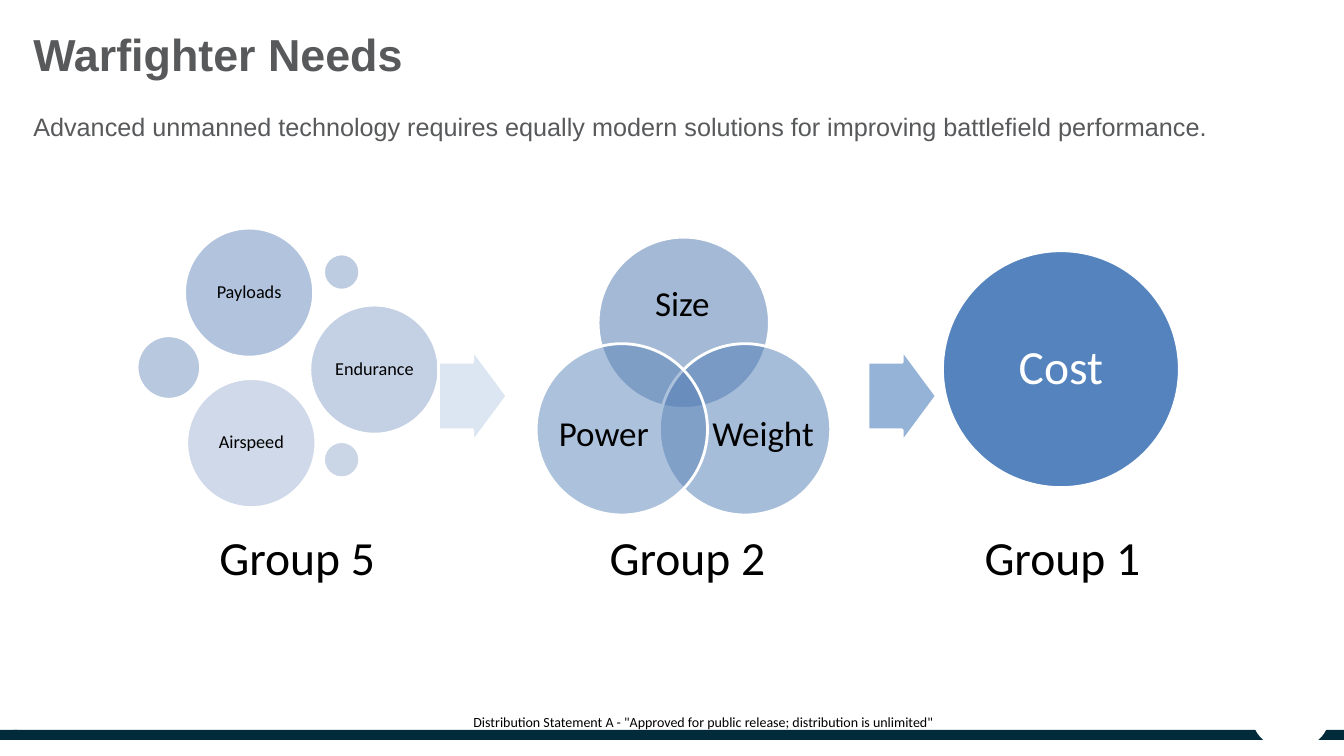
from lxml import etree
from pptx import Presentation
from pptx import util as u
from pptx.dml.color import RGBColor
from pptx.enum import shapes, text
from pptx.oxml import ns

COLORS = {
    "navy": "012A3A", "white": "FFFFFF", "black": "000000", "gray": "58595B",
    "size": "4875AC", "weight": "4F7CB4", "power": "5B84B9",
    "payloads": "678BBD", "left dot": "7393C1", "top dot": "7F9BC6",
    "endurance": "8BA4CA", "low dot": "96ACCF", "airspeed": "A2B4D4",
    "cost": "5483BE", "pale arrow": "DCE6F2", "mid arrow": "95B3D7",
}
SHAPE = shapes.MSO_SHAPE


class SlideBuilder:
    """Holds the style and the current slide."""
    body_font = "Calibri"
    head_font = "Arial"
    outline = 2

    def __init__(self, s):
        self.s = s

    def rgb(self, name):
        return RGBColor.from_string(COLORS[name])

    def add_words(self, tf, words, size, color, font=None, bold=False, inset=(0, 0),
                  align=text.PP_ALIGN.CENTER, anchor=text.MSO_ANCHOR.MIDDLE,
                  spacing=0.9, wrap=True):
        tf.word_wrap = wrap
        tf.auto_size = text.MSO_AUTO_SIZE.NONE
        tf.vertical_anchor = anchor
        tf.margin_left = tf.margin_right = u.Pt(inset[0])
        tf.margin_top = tf.margin_bottom = u.Pt(inset[1])
        p = tf.paragraphs[0]
        p.alignment, p.line_spacing = align, spacing
        p.space_before = u.Pt(0)
        r = p.add_run()
        r.text = words
        r.font.name, r.font.size, r.font.bold = font or self.body_font, u.Pt(size), bold
        r.font.color.rgb = self.rgb(color)

    def heading(self, sp, words, box, size, bold=False):
        sp.left, sp.top, sp.width, sp.height = map(u.Pt, box)
        pPr = sp.text_frame.paragraphs[0]._p.get_or_add_pPr()
        pPr.set("marL", "0")
        pPr.set("indent", "0")
        etree.SubElement(pPr, ns.qn("a:buNone"))
        self.add_words(sp.text_frame, words, size, "gray", self.head_font, bold,
                       align=text.PP_ALIGN.LEFT, anchor=text.MSO_ANCHOR.TOP, spacing=1.0)

    def label(self, words, box, size, **style):
        sp = self.s.shapes.add_textbox(*map(u.Pt, box))
        self.add_words(sp.text_frame, words, size, "black", **style)

    def paint(self, sp, color, outlined=True, alpha=None):
        sp.shadow.inherit = False
        sp.fill.solid()
        sp.fill.fore_color.rgb = self.rgb(color)
        if alpha:
            clr = sp._element.spPr.find(ns.qn("a:solidFill")).find(ns.qn("a:srgbClr"))
            etree.SubElement(clr, ns.qn("a:alpha")).set("val", str(alpha * 1000))
        if outlined:
            sp.line.color.rgb = self.rgb("white")
            sp.line.width = u.Pt(self.outline)
        else:
            sp.line.fill.background()

    def shape(self, kind, box, color, **style):
        sp = self.s.shapes.add_shape(kind, *map(u.Pt, box))
        self.paint(sp, color, **style)
        return sp

    def circle(self, x, y, d, color, alpha=50):
        return self.shape(SHAPE.OVAL, (x, y, d, d), color, alpha=alpha)

    def arrow(self, x, color):
        sp = self.shape(SHAPE.RIGHT_ARROW, (x, 249.8, 49, 66.2), color)
        sp.adjustments[0], sp.adjustments[1] = 0.73, 0.5

    def strips(self, spans, y, h, color):
        fb = None
        for x1, x2 in spans:
            if fb is None:
                fb = self.s.shapes.build_freeform(u.Pt(x1), u.Pt(y))
            else:
                fb.move_to(u.Pt(x1), u.Pt(y))
            corners = [(x2, y), (x2, y + h), (x1, y + h)]
            fb.add_line_segments([(u.Pt(a), u.Pt(b)) for a, b in corners])
        self.paint(fb.convert_to_shape(), color, outlined=False)


def main():
    prs = Presentation()
    prs.slide_width, prs.slide_height = u.Pt(960), u.Pt(540)
    s = prs.slides.add_slide(prs.slide_layouts[1])
    b = SlideBuilder(s)

    # Footer bar with its round notch
    b.strips([(0, 12.2), (198.7, 960)], 521.3, 7.2, "navy")
    b.shape(SHAPE.RECTANGLE, (10.1, 521.3, 188.6, 7.2), "navy", outlined=False)
    b.shape(SHAPE.OVAL, (894.5, 488.2, 55, 47.5), "white", outlined=False)

    # Title and lead sentence
    b.heading(s.shapes.title, "Warfighter Needs", (23.8, 19.4, 900.7, 38.9), 32, bold=True)
    b.heading(s.placeholders[1], "Advanced unmanned technology requires equally modern "
              "solutions for improving battlefield performance.", (23.8, 79.2, 854.6, 21.6), 18)

    # Group 2: overlapping circles
    for words, x, y, box in [
        ("Size", 427.2, 169.4, (442.8, 190.8, 89.3, 54.7)),
        ("Weight", 471, 245.5, (508.3, 277.2, 73.4, 67)),
        ("Power", 383, 245.5, (394.6, 277.2, 73.4, 67)),
    ]:
        b.circle(x, y, 122.4, words.lower())
        b.label(words, box, 25, wrap=False)

    # Group 5: bubbles and dots
    for words, x, y in [("Payloads", 131.8, 162.9), ("Endurance", 221.3, 217.9),
                        ("Airspeed", 133.4, 270.4)]:
        sp = b.circle(x, y, 92.2, words.lower())
        b.add_words(sp.text_frame, words, 13, "black", inset=(3.6, 3.6), wrap=False)
    for name, x, y, d in [("left dot", 97.9, 239.8, 45.4), ("top dot", 231.1, 181.4, 25.9),
                          ("low dot", 231.1, 315.4, 25.9)]:
        b.circle(x, y, d, name)

    # Group 1: one solid circle
    sp = b.circle(673.2, 179.1, 169.2, "cost", alpha=None)
    b.add_words(sp.text_frame, "Cost", 34, "white", inset=(10.1, 10.1))

    # Group captions and arrows between groups
    for words, x in [("Group 5", 102.2), ("Group 2", 380.9), ("Group 1", 648.7)]:
        b.label(words, (x, 370.8, 220.3, 58.3), 34, inset=(10.1, 10.1))
    for x, color in [(313.2, "pale arrow"), (619.9, "mid arrow")]:
        b.arrow(x, color)

    # Distribution statement
    b.label('Distribution Statement A - "Approved for public release; distribution is unlimited"',
            (219.6, 506.2, 565.2, 19.4), 10, inset=(7.2, 3.6),
            anchor=text.MSO_ANCHOR.TOP, spacing=1.0)

    prs.save("out.pptx")


if __name__ == "__main__":
    main()
